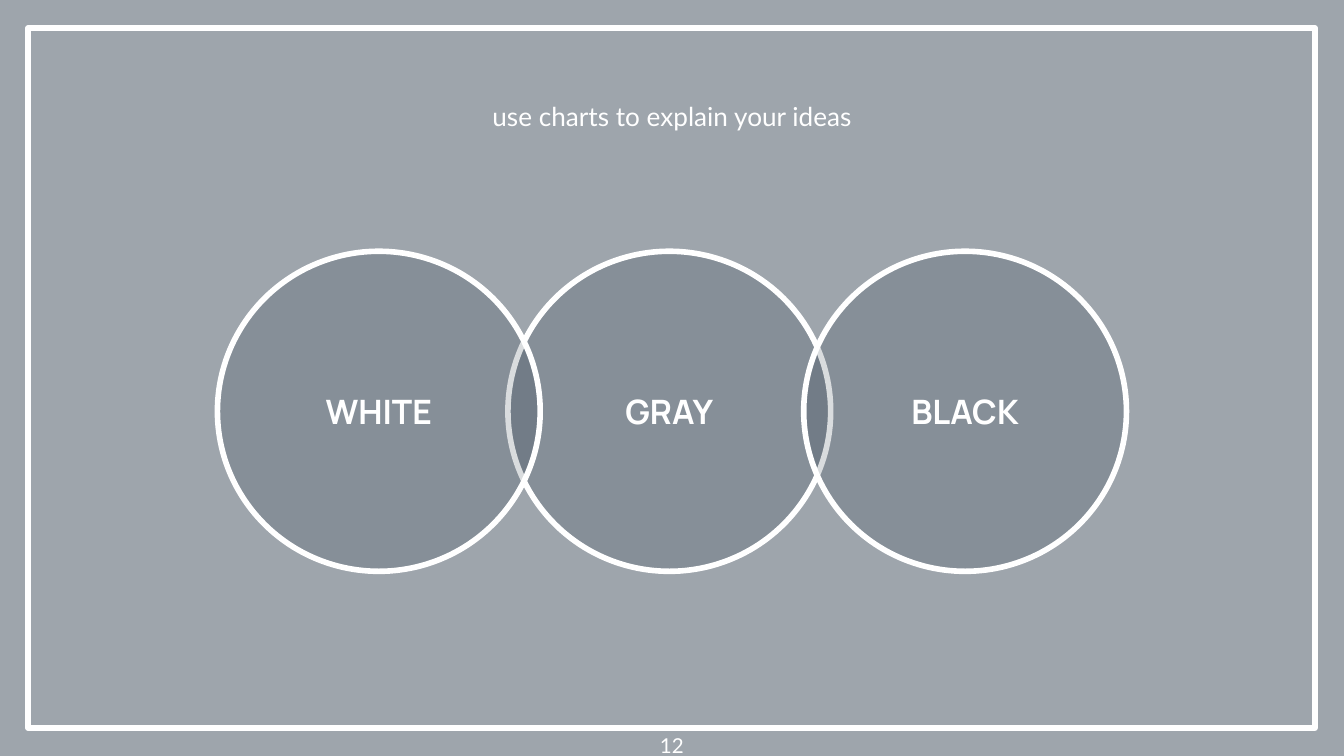
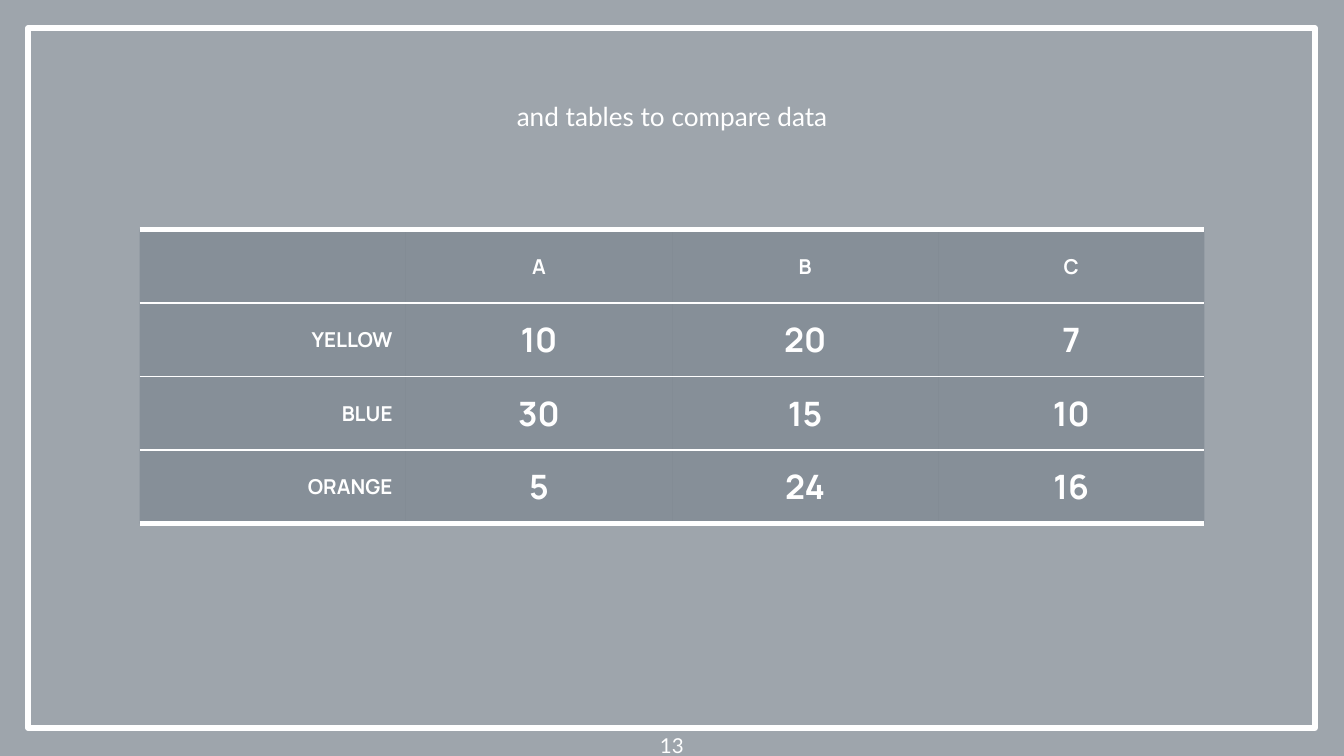
from pptx import Presentation
from pptx import util as u
from pptx.dml.color import RGBColor
from pptx.enum import shapes, text
from pptx.oxml import parse_xml
from pptx.oxml.ns import nsdecls, qn

HUES = {"ink": "021526", "white": "FFFFFF"}
BODY, HEAD = "Lato", "Manrope"
WASH, TINT = 38, 15
THICK, THIN = 3, 0.75
PAD = u.Cm(0.25)
MID, RIGHT = text.PP_ALIGN.CENTER, text.PP_ALIGN.RIGHT


class Deck:
    """Holds the deck's style and the slide being built."""

    def __init__(self):
        self.prs = Presentation()
        self.prs.slide_width = u.Cm(25.4)
        self.prs.slide_height = u.Cm(14.29)
        self.slide = None

    def hue(self, name):
        return RGBColor.from_string(HUES[name])

    def tint(self, fill, node, alpha):
        fill.solid()
        fill.fore_color.rgb = self.hue("ink")
        color = node.find(qn("a:solidFill")).find(qn("a:srgbClr"))
        color.append(parse_xml(f'<a:alpha {nsdecls("a")} val="{alpha * 1000}"/>'))

    def label(self, frame, words, size, font, bold=False, align=MID):
        para = frame.paragraphs[0]
        para.alignment = align
        run = para.add_run()
        run.text = words
        run.font.size = u.Pt(size)
        run.font.name = font
        run.font.bold = bold
        run.font.color.rgb = self.hue("white")

    def fit(self, frame, anchor):
        frame.word_wrap = True
        frame.auto_size = text.MSO_AUTO_SIZE.NONE
        frame.vertical_anchor = anchor
        frame.margin_left = frame.margin_right = PAD
        frame.margin_top = frame.margin_bottom = PAD

    def shape(self, kind, box, alpha=None, line=None):
        item = self.slide.shapes.add_shape(kind, *map(u.Cm, box))
        item.shadow.inherit = False
        if alpha:
            self.tint(item.fill, item.element.spPr, alpha)
        else:
            item.fill.background()
        if line:
            item.line.color.rgb = self.hue("white")
            item.line.width = u.Pt(line)
        else:
            item.line.fill.background()
        return item

    def page(self, title, number):
        self.slide = self.prs.slides.add_slide(self.prs.slide_layouts[5])
        back = self.slide.background.fill
        back.solid()
        back.fore_color.rgb = self.hue("white")
        rect = shapes.MSO_SHAPE.RECTANGLE
        self.shape(rect, (0, 0, 25.4, 14.33), alpha=WASH)
        self.shape(rect, (0.53, 0.53, 24.32, 13.23), line=THICK)
        self.title(title)
        self.foot(number)

    def title(self, words):
        head = self.slide.shapes.title
        head.left, head.top = u.Cm(2.18), u.Cm(0.58)
        head.width, head.height = u.Cm(21.05), u.Cm(3.23)
        self.slide.shapes.element.append(head.element)
        self.fit(head.text_frame, text.MSO_ANCHOR.MIDDLE)
        self.label(head.text_frame, words, 14, BODY)

    def foot(self, number):
        box = self.slide.shapes.add_textbox(0, u.Cm(13.61), u.Cm(25.4), u.Cm(0.58))
        self.fit(box.text_frame, text.MSO_ANCHOR.TOP)
        self.label(box.text_frame, str(number), 11, BODY)

    def disc(self, left, words):
        item = self.shape(shapes.MSO_SHAPE.OVAL, (left, 4.75, 6.1, 6.05), TINT, THICK)
        self.fit(item.text_frame, text.MSO_ANCHOR.MIDDLE)
        self.label(item.text_frame, words, 18, HEAD, bold=True)

    def edge(self, node, spot, side, width=None):
        if width:
            paint = f'<a:solidFill><a:srgbClr val="{HUES["white"]}"/></a:solidFill>'
        else:
            paint = "<a:noFill/>"
        size = u.Pt(width or THIN)
        node.insert(spot, parse_xml(f'<a:ln{side} {nsdecls("a")} w="{size}">{paint}</a:ln{side}>'))

    def cell(self, cell, words, size, align, top, bottom):
        node = cell._tc.get_or_add_tcPr()
        self.tint(cell.fill, node, TINT)
        for spot, (side, width) in enumerate(zip("LRTB", (None, None, top, bottom))):
            self.edge(node, spot, side, width)
        cell.vertical_anchor = text.MSO_ANCHOR.MIDDLE
        cell.margin_left = cell.margin_right = PAD
        cell.margin_top = cell.margin_bottom = u.Cm(0.18)
        if words:
            self.label(cell.text_frame, words, size, HEAD, True, align)

    def table(self, rows, left, top, wide, high):
        count, span = len(rows), len(rows[0])
        grid = self.slide.shapes.add_table(
            count, span, u.Cm(left), u.Cm(top), u.Cm(wide * span), u.Cm(high * count)).table
        grid.first_row = grid.horz_banding = False
        for col in grid.columns:
            col.width = u.Cm(wide)
        for r, row in enumerate(rows):
            grid.rows[r].height = u.Cm(high)
            above = THICK if r == 0 else THIN
            below = THICK if r == count - 1 else THIN
            for c, words in enumerate(row):
                size = 18 if r and c else 11
                align = MID if c else RIGHT
                self.cell(grid.cell(r, c), words, size, align, above, below)


def main():
    deck = Deck()

    deck.page("use charts to explain your ideas", 12)
    for left, words in ((9.6, "GRAY"), (4.11, "WHITE"), (15.19, "BLACK")):
        deck.disc(left, words)

    deck.page("and tables to compare data", 13)
    rows = [
        ("", "A", "B", "C"),
        ("YELLOW", "10", "20", "7"),
        ("BLUE", "30", "15", "10"),
        ("ORANGE", "5", "24", "16"),
    ]
    deck.table(rows, left=2.64, top=4.34, wide=5.03, high=1.39)

    deck.prs.save("out.pptx")


if __name__ == "__main__":
    main()
